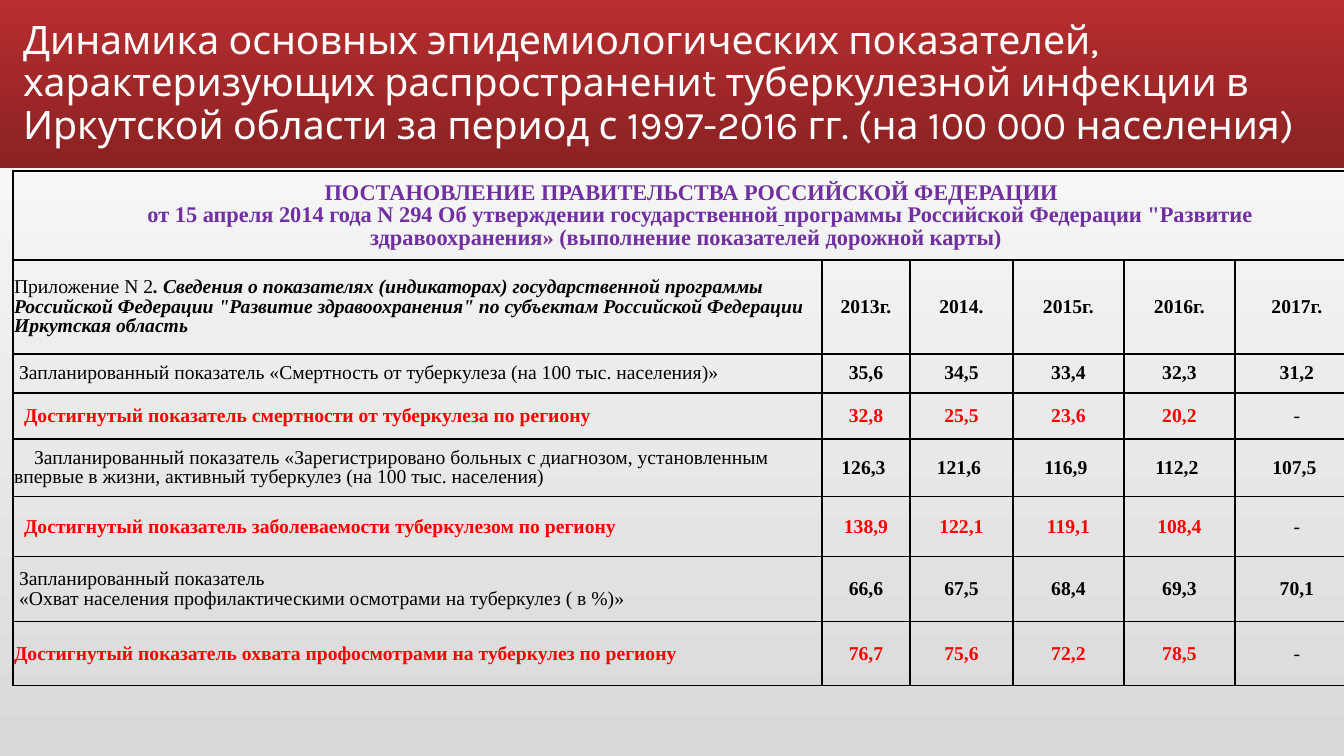
"""Build a slide with a table of planned and achieved tuberculosis indicators."""
from dataclasses import dataclass

from lxml import etree
from pptx import Presentation
from pptx.dml.color import RGBColor
from pptx.enum.shapes import MSO_SHAPE
from pptx.enum.text import MSO_ANCHOR, MSO_AUTO_SIZE, PP_ALIGN
from pptx.oxml.ns import qn
from pptx.util import Emu, Pt

RECT = MSO_SHAPE.RECTANGLE
MIDDLE = MSO_ANCHOR.MIDDLE
NO_FIT = MSO_AUTO_SIZE.NONE
LEFT, CENTER = PP_ALIGN.LEFT, PP_ALIGN.CENTER
EMU_PER_PX = 914400 / 100.8
TITLE_ONLY = 5


@dataclass(frozen=True)
class Theme:
    """Colours, fonts and type sizes of the slide."""
    page: tuple = ("D9D9D9", "FFFFFF")
    band: tuple = ("B82D2F", "8A2223")
    white: str = "FFFFFF"
    black: str = "000000"
    red: str = "FF0000"
    purple: str = "7030A0"
    title_font: str = "Karla"
    table_font: str = "Times New Roman"
    title_size: int = 28
    heading_size: int = 16
    cell_size: int = 14
    spacing: float = 0.9


@dataclass(frozen=True)
class Para:
    """A paragraph of (text, flags) runs with a first-line indent in px."""
    runs: tuple
    indent: int = 0


@dataclass(frozen=True)
class Indicator:
    """One table row: label paragraphs, yearly values and row geometry."""
    height: int
    label: tuple
    values: tuple
    achieved: bool = False
    right: int = 7


def px(n):
    """Turn px into EMU."""
    return Emu(round(n * EMU_PER_PX))


class SlideBuilder:
    """Hold the theme and the current slide."""

    def __init__(self, prs, theme):
        """Add a title slide with a gradient background."""
        self.theme = theme
        self.slide = prs.slides.add_slide(prs.slide_layouts[TITLE_ONLY])
        self.gradient(self.slide.background.fill, theme.page, 90)

    def gradient(self, fill, colors, angle):
        """Give a fill a two-colour linear gradient."""
        fill.gradient()
        fill.gradient_angle = angle
        for stop, color in zip(fill.gradient_stops, colors):
            stop.color.rgb = RGBColor.from_string(color)

    def band(self, x, y, w, h):
        """Draw the gradient band behind the title."""
        sp = self.slide.shapes.add_shape(RECT, px(x), px(y), px(w), px(h))
        sp.shadow.inherit = False
        sp.line.fill.background()
        self.gradient(sp.fill, self.theme.band, 270)
        self.slide.shapes._spTree.insert(2, sp._element)

    def add_paras(self, tf, paras, font, size, color, align):
        """Add paragraphs run by run."""
        for i, para in enumerate(paras):
            p = tf.add_paragraph() if i else tf.paragraphs[0]
            p.alignment = align
            p.line_spacing = self.theme.spacing
            p.space_before = p.space_after = Pt(0)
            if para.indent:
                p._p.get_or_add_pPr().set("indent", str(px(para.indent)))
            for text, flags in para.runs:
                r = p.add_run()
                r.text = text
                r.font.name = font
                r.font.size = Pt(size)
                r.font.bold = "b" in flags
                r.font.italic = "i" in flags
                r.font.underline = "u" in flags
                r.font.color.rgb = RGBColor.from_string(color)

    def title(self, x, y, w, h, text):
        """Place and fill the title placeholder."""
        sp = self.slide.shapes.title
        sp.left, sp.top, sp.width, sp.height = px(x), px(y), px(w), px(h)
        tf = sp.text_frame
        tf.word_wrap, tf.auto_size, tf.vertical_anchor = True, NO_FIT, MIDDLE
        self.add_paras(tf, [Para(((text, ""),))], self.theme.title_font,
                       self.theme.title_size, self.theme.white, LEFT)

    def table(self, x, y, widths, heights):
        """Add a plain table of the given column widths and row heights."""
        table = self.slide.shapes.add_table(
            len(heights), len(widths), px(x), px(y),
            px(sum(widths)), px(sum(heights))).table
        table.first_row = table.horz_banding = False
        for column, width in zip(table.columns, widths):
            column.width = px(width)
        for row, height in zip(table.rows, heights):
            row.height = px(height)
        for cell in table.iter_cells():
            cell.fill.background()
            self.borders(cell)
        return table

    def borders(self, cell):
        """Draw thin lines on all four sides of a cell."""
        tc_pr = cell._tc.get_or_add_tcPr()
        for i, side in enumerate(("a:lnL", "a:lnR", "a:lnT", "a:lnB")):
            ln = etree.Element(qn(side), w=str(Pt(1)))
            fill = etree.SubElement(ln, qn("a:solidFill"))
            etree.SubElement(fill, qn("a:srgbClr"), val=self.theme.black)
            tc_pr.insert(i, ln)

    def cell(self, cell, paras, size, color, align, left=1, right=1):
        """Fill one table cell."""
        cell.vertical_anchor = MIDDLE
        cell.margin_left, cell.margin_right = px(left), px(right)
        cell.margin_top, cell.margin_bottom = px(1), px(0)
        self.add_paras(cell.text_frame, paras, self.theme.table_font, size,
                       color, align)

    def indicator(self, table, row, item):
        """Fill a row with its label and yearly values."""
        t = self.theme
        color = t.red if item.achieved else t.black
        self.cell(table.cell(row, 0), item.label, t.cell_size, color, LEFT)
        for col, value in enumerate(item.values, 1):
            empty = value == "-"
            self.cell(table.cell(row, col),
                      [Para(((value, "" if empty else "b"),))], t.cell_size,
                      t.black if empty else color, CENTER, 7, item.right)


TITLE = ("Динамика основных эпидемиологических показателей, характеризующих "
         "распространениt туберкулезной инфекции в Иркутской области за период "
         "с 1997-2016 гг. (на 100 000 населения)")
HEADING_HEIGHT = 89
HEADING = (
    Para((("ПОСТАНОВЛЕНИЕ ПРАВИТЕЛЬСТВА РОССИЙСКОЙ ФЕДЕРАЦИИ", "b"),), 11),
    Para((("от 15 апреля 2014 года N 294 Об утверждении государственной", "b"),
          (" ", "bu"),
          ("программы Российской Федерации \"Развитие здравоохранения» "
           "(выполнение показателей дорожной карты)", "b")), 28),
)
WIDTHS = (809, 88, 103, 111, 111, 95)
ROWS = (
    Indicator(94, (Para((
        ("Приложение N 2", ""),
        (". Сведения о показателях (индикаторах) государственной программы "
         "Российской Федерации \"Развитие здравоохранения\" по субъектам "
         "Российской Федерации Иркутская область", "bi"))),),
        ("2013г.", "2014.", "2015г.", "2016г.", "2017г.")),
    Indicator(39, (Para(((
        "Запланированный показатель «Смертность от туберкулеза "
        "(на 100 тыс. населения)»", ""),), 5),),
        ("35,6", "34,5", "33,4", "32,3", "31,2")),
    Indicator(46, (Para(((
        "Достигнутый показатель смертности от туберкулеза по региону",
        "b"),), 10),), ("32,8", "25,5", "23,6", "20,2", "-"), True),
    Indicator(58, (Para(((
        "Запланированный показатель «Зарегистрировано больных с диагнозом, "
        "установленным впервые в жизни, активный туберкулез "
        "(на 100 тыс. населения)", ""),), 20),),
        ("126,3", "121,6", "116,9", "112,2", "107,5"), right=12),
    Indicator(60, (Para(((
        "Достигнутый показатель заболеваемости туберкулезом по региону",
        "b"),), 10),), ("138,9", "122,1", "119,1", "108,4", "-"), True),
    Indicator(65, (
        Para((("Запланированный показатель", ""),), 5),
        Para((("«Охват населения профилактическими осмотрами на туберкулез "
               "( в %)»", ""),), 5)),
        ("66,6", "67,5", "68,4", "69,3", "70,1")),
    Indicator(64, (Para(((
        "Достигнутый показатель охвата профосмотрами на туберкулез по региону",
        "b"),)),), ("76,7", "75,6", "72,2", "78,5", "-"), True),
)


def main():
    """Build and save the slide."""
    prs = Presentation()
    prs.slide_width, prs.slide_height = px(1344), px(756)
    theme = Theme()
    s = SlideBuilder(prs, theme)
    s.band(0, 0, 1344, 168)
    s.title(13, 11, 1309, 146, TITLE)
    table = s.table(13, 171, WIDTHS, [HEADING_HEIGHT] + [r.height for r in ROWS])
    heading = table.cell(0, 0)
    heading.merge(table.cell(0, len(WIDTHS) - 1))
    s.cell(heading, HEADING, theme.heading_size, theme.purple, CENTER, 60, 60)
    for row, item in enumerate(ROWS, 1):
        s.indicator(table, row, item)
    prs.save("out.pptx")


if __name__ == "__main__":
    main()
